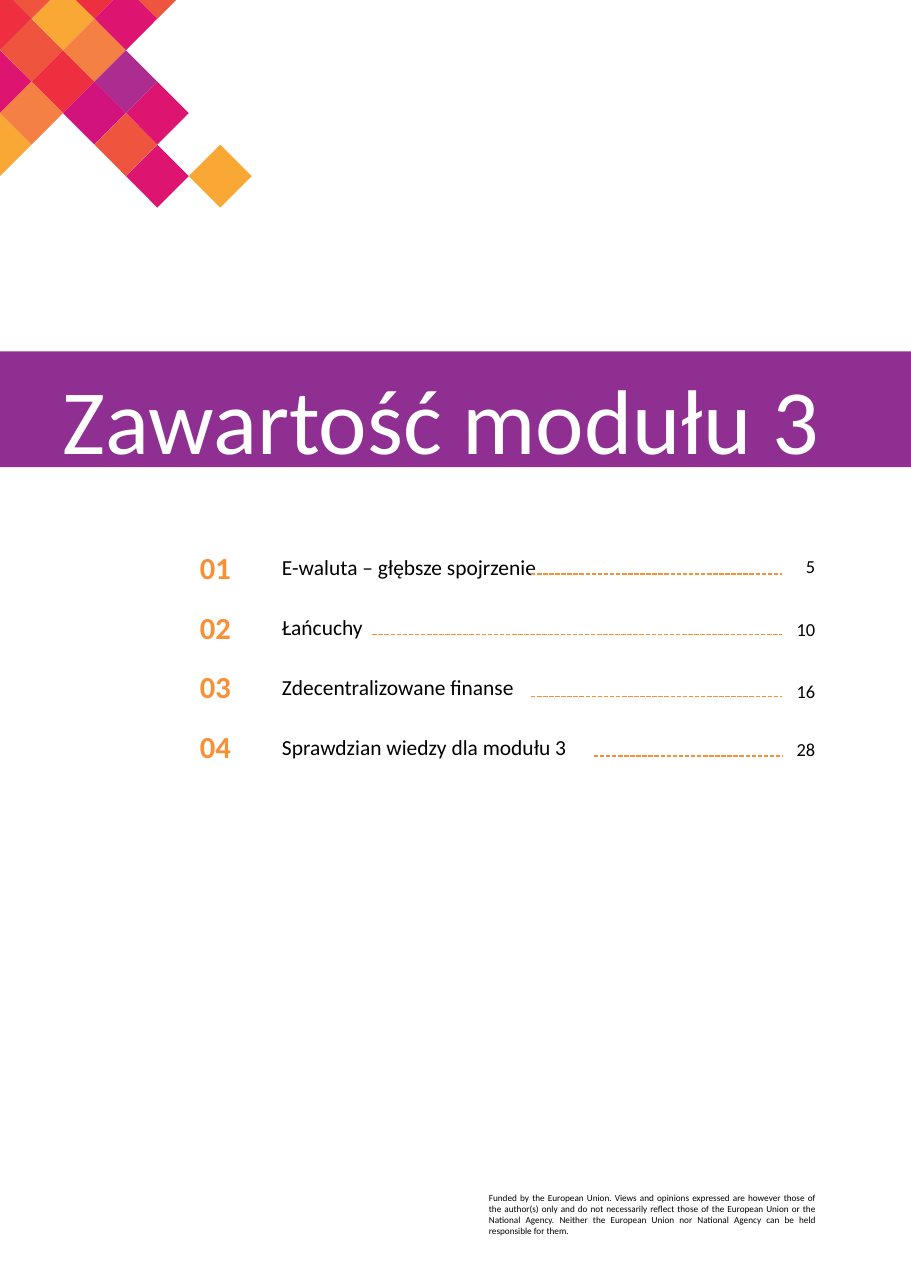
import pptx
import pptx.util
import pptx.dml.color
import pptx.enum.dml
import pptx.enum.shapes
import pptx.enum.text
import pptx.oxml.ns
import lxml.etree

Inches = pptx.util.Inches
Pt = pptx.util.Pt
ALIGN = pptx.enum.text.PP_ALIGN
ANCHOR = pptx.enum.text.MSO_ANCHOR

COLORS = {
    "band": "8E2F91",
    "accent": "F79037",
    "text": "000000",
    "white": "FFFFFF",
    "red": "ED2F40",
    "pink": "DD1470",
    "magenta": "D3137D",
    "purple": "AC2C90",
    "coral": "EF543F",
    "orange": "F48043",
    "yellow": "F9A835",
}

DIAMOND_STEP = 2 / 7
DIAMOND_TOP = 0.17
DIAMONDS = [
    (3, -1, "red"), (4, 0, "pink"), (5, -1, "coral"), (2, 0, "yellow"),
    (1, 1, "coral"), (2, 2, "red"), (3, 1, "orange"), (0, 2, "pink"),
    (0, 4, "yellow"), (1, 3, "orange"), (7, 5, "yellow"), (5, 5, "pink"),
    (5, 3, "pink"), (4, 2, "purple"), (3, 3, "magenta"), (4, 4, "coral"),
    (1, -1, "coral"), (0, 0, "red"),
]

CONTENTS = [
    ("01", "E-waluta – głębsze spojrzenie", "5", 4.82, 5.21, 4.95),
    ("02", "Łańcuchy", "10", 3.38, 5.76, 5.52),
    ("03", "Zdecentralizowane finanse", "16", 4.82, 6.32, 6.08),
    ("04", "Sprawdzian wiedzy dla modułu 3", "28", 5.39, 6.86, 6.61),
]
ROW_PITCH = 39.4
LINE_HEIGHT = 1.22

DISCLAIMER = (
    "Funded by the European Union. Views and opinions expressed are however "
    "those of the author(s) only and do not necessarily reflect those of the "
    "European Union or the National Agency. Neither the European Union nor "
    "National Agency can be held responsible for them."
)


def color(name):
    return pptx.dml.color.RGBColor.from_string(COLORS[name])


def paint(shape, name):
    shape.shadow.inherit = False
    shape.fill.solid()
    shape.fill.fore_color.rgb = color(name)
    shape.line.fill.background()


def place(shape, left, top, width, height):
    shape.left, shape.top = Inches(left), Inches(top)
    shape.width, shape.height = Inches(width), Inches(height)


def write(box, text, size, name="text", align=ALIGN.LEFT,
          anchor=ANCHOR.MIDDLE, bold=False, gap=0):
    frame = box.text_frame
    frame.text = text
    frame.word_wrap = True
    frame.auto_size = pptx.enum.text.MSO_AUTO_SIZE.NONE
    frame.vertical_anchor = anchor
    for index, para in enumerate(frame.paragraphs):
        para.alignment = align
        para.space_before = Pt(gap if index else 0)
        for span in para.runs:
            span.font.name = "Calibri"
            span.font.size = Pt(size)
            span.font.bold = bold
            span.font.color.rgb = color(name)


def write_list(holder, items, size, **style):
    write(holder, "\n".join(items), size,
          gap=round(ROW_PITCH - size * LINE_HEIGHT, 1), **style)
    for para in holder.text_frame.paragraphs:
        properties = para._p.get_or_add_pPr()
        properties.set("marL", "0")
        properties.set("indent", "0")
        lxml.etree.SubElement(properties, pptx.oxml.ns.qn("a:buNone"))


def add_text(page, left, top, width, height, text, size, **style):
    box = page.shapes.add_textbox(
        Inches(left), Inches(top), Inches(width), Inches(height))
    write(box, text, size, **style)


def add_leader(page, start, end, top):
    leader = page.shapes.add_connector(
        pptx.enum.shapes.MSO_CONNECTOR.STRAIGHT,
        Inches(start), Inches(top), Inches(end), Inches(top))
    leader.line.color.rgb = color("accent")
    leader.line.width = Pt(1)
    leader.line.dash_style = pptx.enum.dml.MSO_LINE.SQUARE_DOT
    lxml.etree.SubElement(
        leader.element.spPr, pptx.oxml.ns.qn("a:effectLst"))


def clip(points, axis):
    kept = []
    for first, second in zip(points, points[1:] + points[:1]):
        if first[axis] >= 0:
            kept.append(first)
        if first[axis] * second[axis] < 0:
            share = first[axis] / (first[axis] - second[axis])
            kept.append(tuple(a + share * (b - a)
                              for a, b in zip(first, second)))
    return kept


def add_diamond(page, column, row, name):
    x, y = column * DIAMOND_STEP, DIAMOND_TOP + row * DIAMOND_STEP
    tips = [(x, y - DIAMOND_STEP), (x + DIAMOND_STEP, y),
            (x, y + DIAMOND_STEP), (x - DIAMOND_STEP, y)]
    outline = [(Inches(a), Inches(b)) for a, b in clip(clip(tips, 0), 1)]
    builder = page.shapes.build_freeform(*outline[0])
    builder.add_line_segments(outline[1:], close=True)
    paint(builder.convert_to_shape(), name)


def add_title(page):
    band = page.shapes.add_shape(
        pptx.enum.shapes.MSO_SHAPE.RECTANGLE,
        Inches(0), Inches(3.19), Inches(8.27), Inches(1.05))
    paint(band, "band")
    title = page.shapes.title
    band.element.addnext(title.element)
    place(title, 0.47, 3.24, 7.36, 1.06)
    write(title, "Zawartość modułu 3", 60, name="white", anchor=ANCHOR.TOP)


def add_contents(page):
    numbers, topics = page.placeholders[1], page.placeholders[2]
    place(numbers, 1.6, 4.95, 0.71, 2.02)
    write_list(numbers, [entry[0] for entry in CONTENTS], 20,
               name="accent", align=ALIGN.CENTER, bold=True)
    place(topics, 2.46, 4.95, 4.35, 2.02)
    write_list(topics, [entry[1] for entry in CONTENTS], 14)
    for _, _, number, start, leader_top, number_top in CONTENTS:
        add_leader(page, start, 7.1, leader_top)
        add_text(page, 7, number_top, 0.5, 0.38, number, 12,
                 align=ALIGN.RIGHT)


def main():
    deck = pptx.Presentation()
    deck.slide_width, deck.slide_height = Inches(8.27), Inches(11.69)
    page = deck.slides.add_slide(deck.slide_layouts[3])
    add_title(page)
    for column, row, name in DIAMONDS:
        add_diamond(page, column, row, name)
    add_contents(page)
    add_text(page, 4.34, 10.77, 3.16, 0.5, DISCLAIMER, 6,
             align=ALIGN.JUSTIFY, anchor=ANCHOR.TOP)
    deck.save("out.pptx")


if __name__ == "__main__":
    main()
